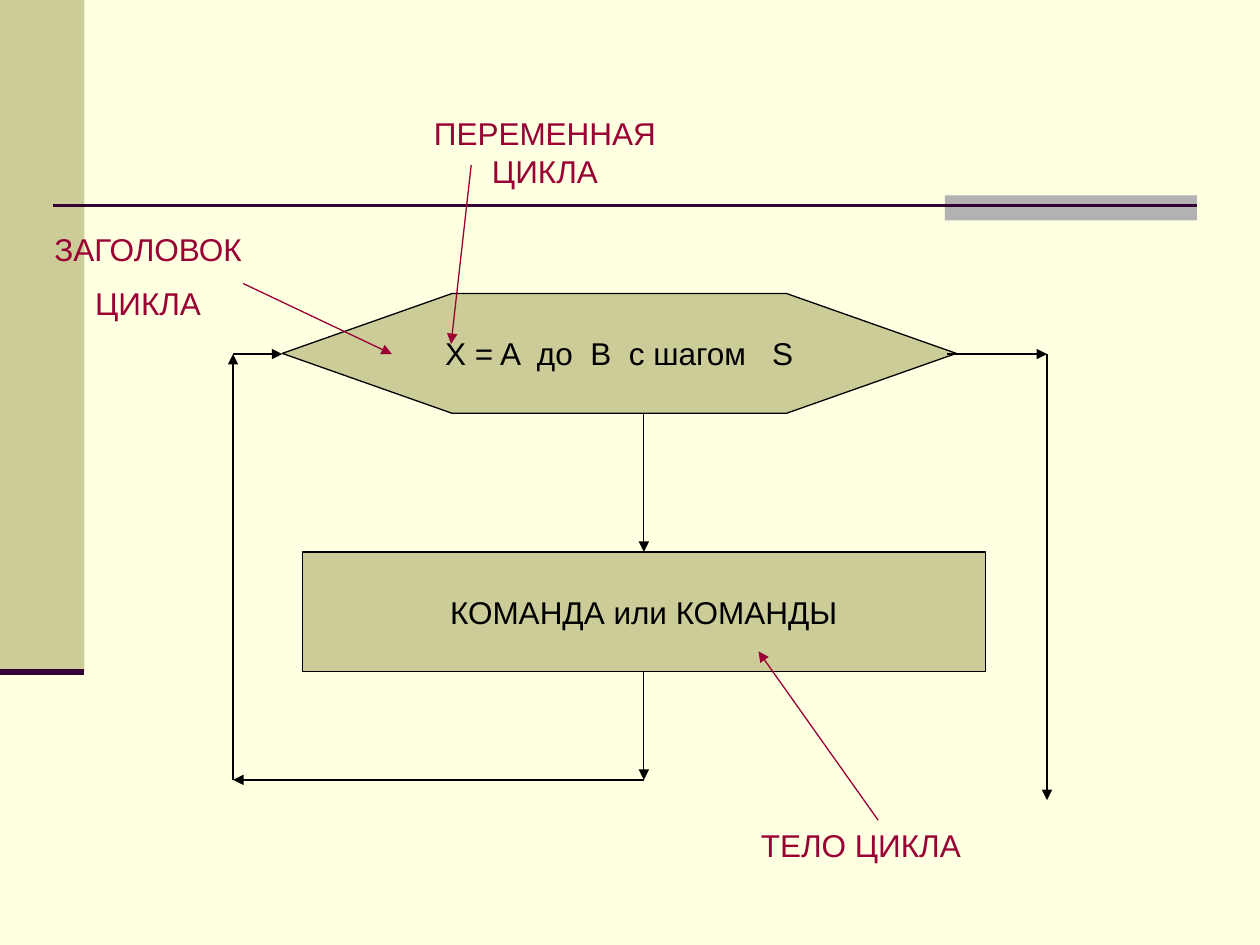
from dataclasses import dataclass
from itertools import pairwise

from lxml import etree
from pptx import Presentation
from pptx.dml.color import RGBColor
from pptx.enum.shapes import MSO_CONNECTOR, MSO_SHAPE
from pptx.enum.text import MSO_ANCHOR, PP_ALIGN
from pptx.oxml.ns import qn
from pptx.util import Inches, Pt

STRAIGHT = MSO_CONNECTOR.STRAIGHT
RECTANGLE, HEXAGON = MSO_SHAPE.RECTANGLE, MSO_SHAPE.HEXAGON
LEFT, CENTER = PP_ALIGN.LEFT, PP_ALIGN.CENTER
MIDDLE = MSO_ANCHOR.MIDDLE
TOP_SITE, BOTTOM_SITE = 0, 2
COLUMNS, ROWS = 100, 75


@dataclass(frozen=True)
class Theme:
    paper: str = "FFFFE1"
    olive: str = "CCCC99"
    gray: str = "B2B2B2"
    plum: str = "330033"
    ink: str = "000000"
    accent: str = "990033"
    font: str = "Arial"
    text_size: float = 18
    paragraph_gap: float = 9
    thin: float = 0.75
    rule: float = 1.5
    thick: float = 3.5


class FlowchartSlide:
    """Draws flowchart elements on a slide measured in grid columns and rows."""

    def __init__(self, deck, theme):
        self.theme = theme
        self.slide = deck.slides.add_slide(deck.slide_layouts[6])
        self.column = deck.slide_width / COLUMNS
        self.row = deck.slide_height / ROWS
        background = self.slide.background.fill
        background.solid()
        background.fore_color.rgb = RGBColor.from_string(theme.paper)

    def place(self, *lengths):
        units = (self.column, self.row) * 2
        return [round(length * unit) for length, unit in zip(lengths, units)]

    def set_text(self, frame, lines, color, align, gap=0):
        frame.text = "\n".join(lines)
        for index, paragraph in enumerate(frame.paragraphs):
            paragraph.alignment = align
            paragraph.space_before = Pt(gap if index else 0)
            paragraph.font.name = self.theme.font
            paragraph.font.size = Pt(self.theme.text_size)
            paragraph.font.color.rgb = RGBColor.from_string(color)

    def bar(self, box, color, preset=RECTANGLE):
        shape = self.slide.shapes.add_shape(preset, *self.place(*box))
        shape.shadow.inherit = False
        shape.fill.solid()
        shape.fill.fore_color.rgb = RGBColor.from_string(color)
        shape.line.fill.background()
        return shape

    def block(self, box, text, preset=RECTANGLE):
        shape = self.bar(box, self.theme.olive, preset)
        shape.line.color.rgb = RGBColor.from_string(self.theme.ink)
        shape.line.width = Pt(self.theme.thin)
        shape.text_frame.word_wrap = False
        shape.text_frame.vertical_anchor = MIDDLE
        self.set_text(shape.text_frame, [text], self.theme.ink, CENTER)
        return shape

    def label(self, box, lines, align=CENTER):
        frame = self.slide.shapes.add_textbox(*self.place(*box)).text_frame
        frame.word_wrap = True
        self.set_text(frame, lines, self.theme.accent, align, self.theme.paragraph_gap)

    def line(self, start, end, color, width):
        connector = self.slide.shapes.add_connector(STRAIGHT, *self.place(*start, *end))
        connector.line.color.rgb = RGBColor.from_string(color)
        connector.line.width = Pt(width)
        etree.SubElement(connector._element.spPr, qn("a:effectLst"))
        return connector

    def arrow(self, start, end, color):
        connector = self.line(start, end, color, self.theme.thin)
        outline = connector._element.spPr.find(qn("a:ln"))
        etree.SubElement(outline, qn("a:tailEnd"), type="triangle")
        return connector

    def route(self, *stops):
        return [self.arrow(start, end, self.theme.ink) for start, end in pairwise(stops)]


def main():
    deck = Presentation()
    deck.slide_width, deck.slide_height = Inches(10), Inches(7.5)
    theme = Theme()
    chart = FlowchartSlide(deck, theme)

    sidebar_width, sidebar_bottom, rule_row = 6.7, 53.3, 16.3
    chart.bar((0, 0, sidebar_width, sidebar_bottom), theme.olive)
    chart.bar((75, 15.5, 20, 2), theme.gray)
    chart.line((4.2, rule_row), (95, rule_row), theme.plum, theme.rule)
    chart.line((0, sidebar_bottom), (sidebar_width, sidebar_bottom), theme.plum, theme.thick)

    axis, header_row, header_bottom = 51.1, 28.1, 32.8
    body_top, body_bottom = 43.8, 53.3
    return_column, return_row, exit_column = 18.5, 61.9, 83.1

    header = chart.block((22.4, 23.3, 53.5, 9.5), "X = A  до  B  с шагом   S", HEXAGON)
    header.adjustments[0] = 1.417
    body = chart.block((24, body_top, 54.2, body_bottom - body_top), "КОМАНДА или КОМАНДЫ")

    loop_back = chart.route(
        (axis, body_bottom),
        (axis, return_row),
        (return_column, return_row),
        (return_column, header_row),
        (22.4, header_row),
    )
    loop_back[0].begin_connect(body, BOTTOM_SITE)
    chart.route((75.2, header_row), (exit_column, header_row), (exit_column, 63.5))
    [entry] = chart.route((axis, header_bottom), (axis, body_top))
    entry.end_connect(body, TOP_SITE)

    chart.arrow((69.7, 65.1), (60.2, 51.7), theme.accent)
    chart.label((59.4, 65.1, 20.5, 4), ["ТЕЛО ЦИКЛА"], LEFT)
    chart.arrow((19.3, 22.5), (31.1, header_row), theme.accent)
    chart.label((2.7, 17.8, 18.1, 8.5), ["ЗАГОЛОВОК", "ЦИКЛА"])
    chart.arrow((37.4, 13.1), (35.8, 27.3), theme.accent)
    chart.label((31.7, 8.6, 23.1, 7), ["ПЕРЕМЕННАЯ ЦИКЛА"])

    deck.save("out.pptx")


if __name__ == "__main__":
    main()
